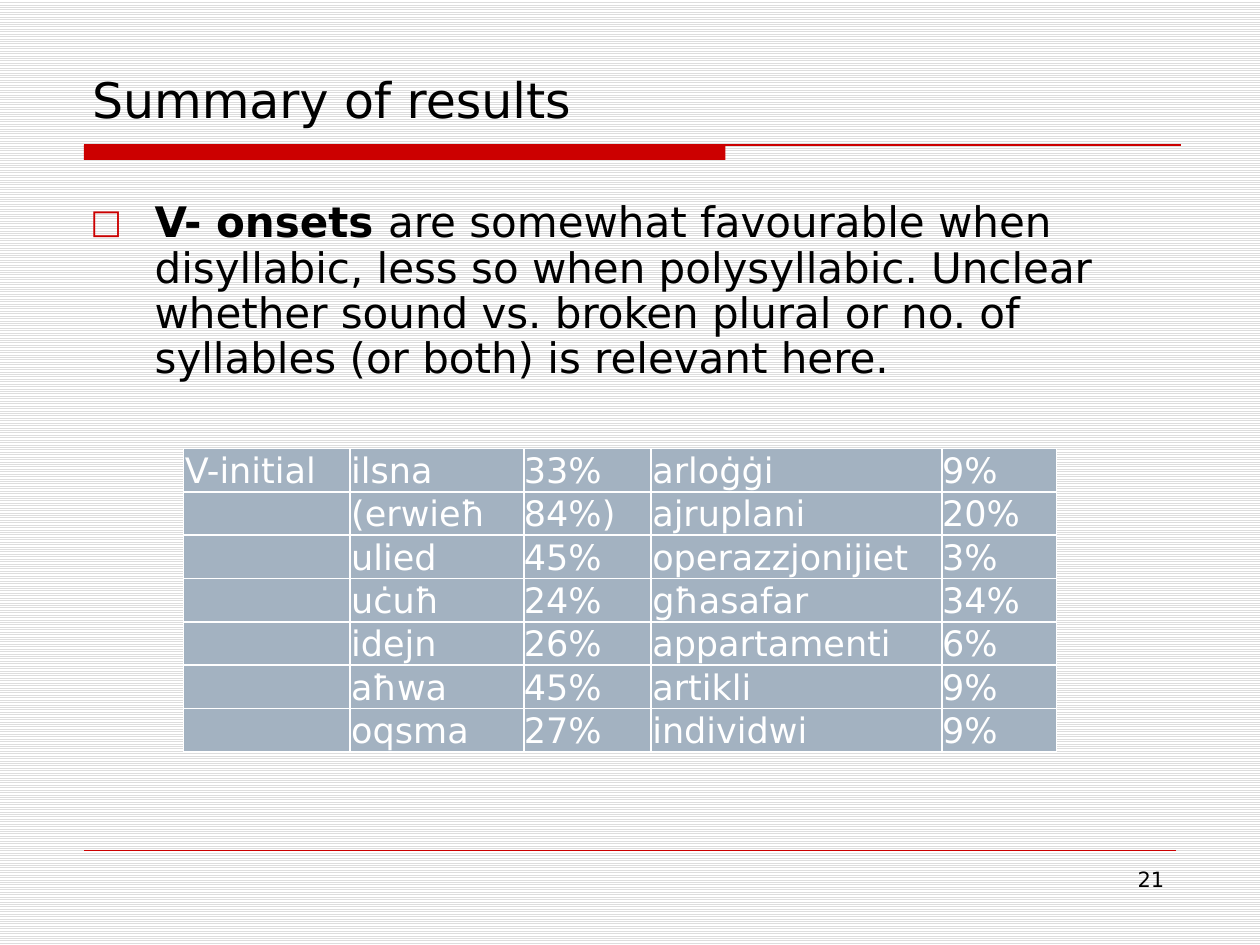
import pptx
import pptx.util
import pptx.dml.color
import pptx.enum.dml
import pptx.enum.shapes
import pptx.enum.text
import pptx.oxml
import pptx.oxml.ns
import lxml.etree

Pt = pptx.util.Pt
RGB = pptx.dml.color.RGBColor
ALIGN = pptx.enum.text.PP_ALIGN
ANCHOR = pptx.enum.text.MSO_ANCHOR

TITLE = "Summary of results"
BODY = [
    ("V- onsets ", True),
    ("are somewhat favourable when disyllabic, less so when polysyllabic. "
     "Unclear whether sound vs. broken plural or no. of syllables (or both) "
     "is relevant here.", False),
]
ROWS = [
    ("V-initial", "ilsna", "33%", "arloġġi", "9%"),
    ("", "(erwieħ", "84%)", "ajruplani", "20%"),
    ("", "ulied", "45%", "operazzjonijiet", "3%"),
    ("", "uċuħ", "24%", "għasafar", "34%"),
    ("", "idejn", "26%", "appartamenti", "6%"),
    ("", "aħwa", "45%", "artikli", "9%"),
    ("", "oqsma", "27%", "individwi", "9%"),
]
COLS = [95, 99.4, 72.7, 166.3, 65.5]
INSETS = [0.72, 0.72, 0, 0.72, 0]
HIGH = 24
NUMBER = "21"

FONT = "DejaVu Sans"
BLACK = RGB(0, 0, 0)
WHITE = RGB(255, 255, 255)
GREY = RGB(0xDD, 0xDD, 0xDD)
RED = RGB(0xCC, 0, 0)
SLATE = RGB(0xA3, 0xB2, 0xC1)


def write(para, text, size, color=BLACK, bold=False):
    run = para.add_run()
    run.text = text
    font = run.font
    font.name, font.size, font.bold = FONT, Pt(size), bold
    font.color.rgb = color


def place(shape, *box):
    shape.left, shape.top, shape.width, shape.height = map(Pt, box)


def add_box(slide, *box):
    frame = slide.shapes.add_textbox(*map(Pt, box)).text_frame
    frame.word_wrap = True
    return frame.paragraphs[0]


def add_rule(slide, left, right, top, width):
    kind = pptx.enum.shapes.MSO_CONNECTOR.STRAIGHT
    rule = slide.shapes.add_connector(kind, Pt(left), Pt(top), Pt(right), Pt(top))
    rule.line.color.rgb = RED
    rule.line.width = Pt(width)
    lxml.etree.SubElement(rule._element.spPr, pptx.oxml.ns.qn("a:effectLst"))


def add_bullet(para, indent):
    props = para._p.get_or_add_pPr()
    props.set("marL", str(Pt(indent)))
    props.set("indent", str(Pt(-indent)))
    space = pptx.oxml.ns.nsdecls("a")
    for xml in (
        f'<a:buClr {space}><a:srgbClr val="{RED}"/></a:buClr>',
        f'<a:buSzPct {space} val="80000"/>',
        f'<a:buFont {space} typeface="{FONT}"/>',
        f'<a:buChar {space} char="□"/>',
    ):
        props.append(pptx.oxml.parse_xml(xml))


def add_grid(slide, left, top):
    frame = slide.shapes.add_table(
        len(ROWS), len(COLS), Pt(left), Pt(top), Pt(sum(COLS)), Pt(HIGH * len(ROWS)))
    table = frame.table
    table.first_row = table.horz_banding = False
    for col, width in zip(table.columns, COLS):
        col.width = Pt(width)
    for r, row in enumerate(ROWS):
        table.rows[r].height = Pt(HIGH)
        for c, text in enumerate(row):
            cell = table.cell(r, c)
            cell.fill.solid()
            cell.fill.fore_color.rgb = SLATE
            cell.vertical_anchor = ANCHOR.BOTTOM
            cell.margin_left = cell.margin_right = cell.margin_top = Pt(INSETS[c])
            cell.margin_bottom = 0
            if text:
                write(cell.text_frame.paragraphs[0], text, 20, WHITE)


def main():
    deck = pptx.Presentation()
    deck.slide_width, deck.slide_height = Pt(720), Pt(540)
    slide = deck.slides.add_slide(deck.slide_layouts[5])

    back = slide.background.fill
    back.patterned()
    back.pattern = pptx.enum.dml.MSO_PATTERN.LIGHT_HORIZONTAL
    back.fore_color.rgb, back.back_color.rgb = GREY, WHITE

    bar = slide.shapes.add_shape(
        pptx.enum.shapes.MSO_SHAPE.RECTANGLE, Pt(48), Pt(82.8), Pt(366.5), Pt(8.6))
    bar.shadow.inherit = False
    bar.fill.solid()
    bar.fill.fore_color.rgb = RED
    bar.line.fill.background()
    add_rule(slide, 48, 674.8, 82.8, 0.75)
    add_rule(slide, 48, 672, 486, 0.25)

    title = slide.shapes.title
    place(title, 45.4, 23.8, 630, 53.3)
    frame = title.text_frame
    frame.auto_size = pptx.enum.text.MSO_AUTO_SIZE.NONE
    frame.vertical_anchor = ANCHOR.BOTTOM
    head = frame.paragraphs[0]
    head.alignment = ALIGN.LEFT
    write(head, TITLE, 28)

    body = add_box(slide, 44.6, 111.6, 630, 62.6)
    body.line_spacing = 0.9
    body.space_before, body.space_after = Pt(4.8), Pt(6)
    add_bullet(body, 36.7)
    for text, bold in BODY:
        write(body, text, 24, bold=bold)

    add_grid(slide, 105, 256.3)

    page = add_box(slide, 516.2, 491.8, 156.2, 37.4)
    page.alignment = ALIGN.RIGHT
    write(page, NUMBER, 12)

    deck.save("out.pptx")


if __name__ == "__main__":
    main()
